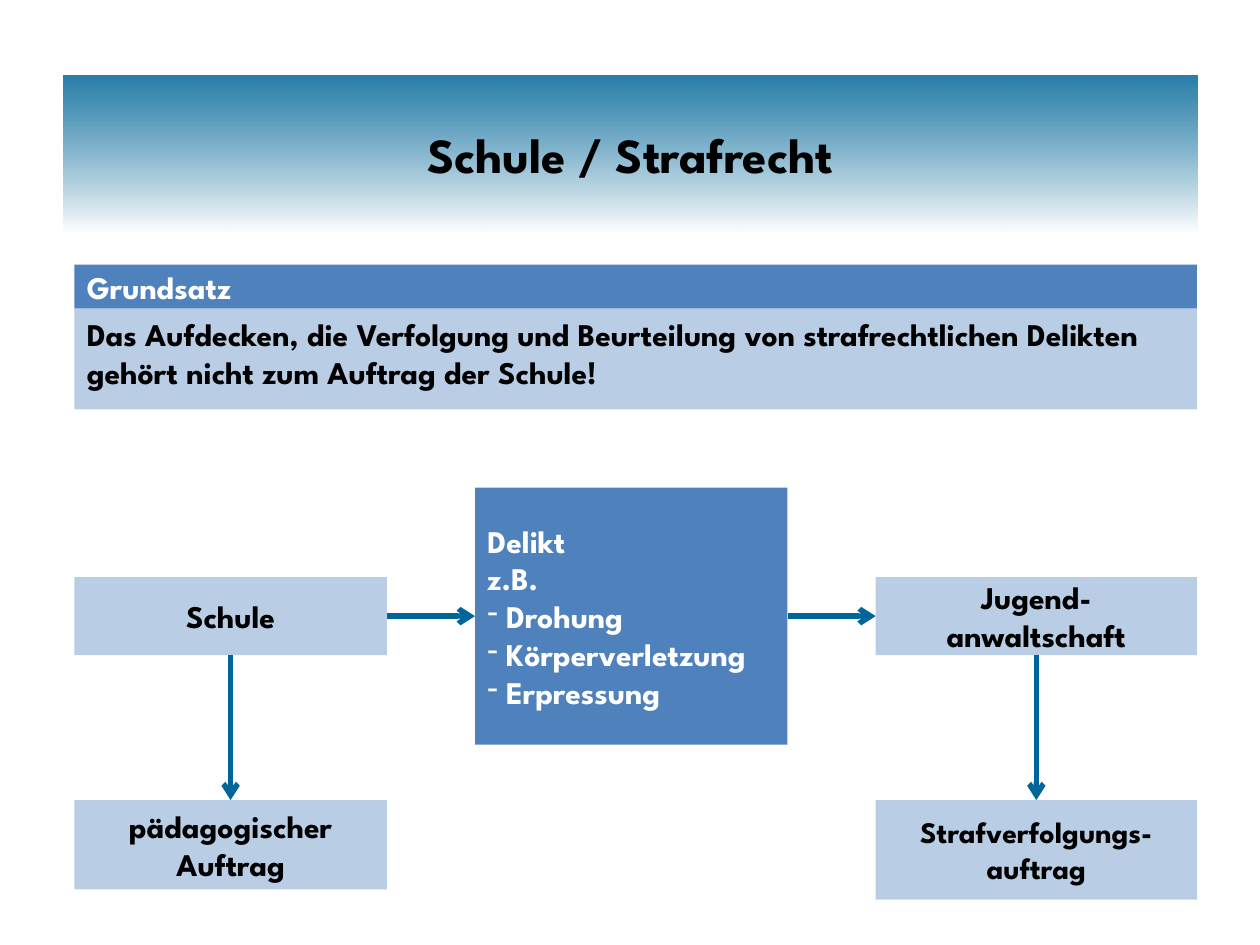
"""Build the slide on school and criminal law."""
from lxml.etree import SubElement
from pptx import Presentation
from pptx.dml.color import RGBColor
from pptx.enum.shapes import MSO_CONNECTOR, MSO_SHAPE
from pptx.enum.text import MSO_ANCHOR, PP_ALIGN
from pptx.oxml.ns import qn
from pptx.util import Inches, Pt

COLORS = {"dark": "4F81BD", "light": "B9CDE5", "accent": "006699",
          "black": "000000", "white": "FFFFFF"}
FONT = "League Spartan"
TOP, LEFT, BOTTOM, RIGHT = range(4)


class SlideBuilder:
    """Hold the style and the current slide."""

    def __init__(self, prs):
        self.slide = prs.slides.add_slide(prs.slide_layouts[5])

    def color(self, name):
        return RGBColor.from_string(COLORS[name])

    def format(self, p, size, color, align):
        p.alignment = align
        p.font.name = FONT
        p.font.size = Pt(size)
        p.font.bold = True
        p.font.color.rgb = self.color(color)

    def title(self, text, x, y, w, h):
        sp = self.slide.shapes.title
        sp.left, sp.top, sp.width, sp.height = map(Inches, (x, y, w, h))
        sp.fill.gradient()
        sp.fill.gradient_angle = 270
        start, end = sp.fill.gradient_stops
        start.position, end.position = 0, 1
        start.color.rgb = self.color("accent")
        end.color.rgb = self.color("white")
        rgb = sp._element.spPr.find(".//" + qn("a:srgbClr"))
        SubElement(rgb, qn("a:alpha"), val="84000")
        tf = sp.text_frame
        tf.text = text
        tf.vertical_anchor = MSO_ANCHOR.MIDDLE
        self.format(tf.paragraphs[0], 28, "black", PP_ALIGN.CENTER)

    def box(self, lines, x, y, w, h, fill="light", size=18, align=PP_ALIGN.CENTER,
            anchor=MSO_ANCHOR.MIDDLE, bullets=()):
        sp = self.slide.shapes.add_shape(MSO_SHAPE.RECTANGLE, *map(Inches, (x, y, w, h)))
        sp.shadow.inherit = False
        sp.fill.solid()
        sp.fill.fore_color.rgb = self.color(fill)
        sp.line.fill.background()
        tf = sp.text_frame
        tf.word_wrap = True
        tf.vertical_anchor = anchor
        color = "white" if fill == "dark" else "black"
        for i, text in enumerate([*lines, *bullets]):
            p = tf.add_paragraph() if i else tf.paragraphs[0]
            p.text = text
            if i >= len(lines):
                SubElement(p._p.get_or_add_pPr(), qn("a:buChar"), char="-")
            self.format(p, size, color, align)
        return sp

    def arrow(self, start, start_side, end, end_side):
        cxn = self.slide.shapes.add_connector(MSO_CONNECTOR.STRAIGHT, 0, 0, 0, 0)
        cxn.begin_connect(start, start_side)
        cxn.end_connect(end, end_side)
        cxn.line.color.rgb = self.color("accent")
        cxn.line.width = Pt(3)
        SubElement(cxn.line._get_or_add_ln(), qn("a:tailEnd"), type="arrow")
        SubElement(cxn._element.spPr, qn("a:effectLst"))


def main():
    prs = Presentation()
    prs.slide_width, prs.slide_height = Inches(10), Inches(7.5)
    s = SlideBuilder(prs)
    s.title("Schule / Strafrecht", 0.5, 0.6, 9, 1.25)

    left, middle, right = 0.59, 3.77, 6.95
    col_w, right_w, full_w = 2.48, 2.55, 8.91
    actor_y, actor_h, task_y = 4.58, 0.62, 6.35

    s.box(["Grundsatz"], left, 2.1, full_w, 0.35, "dark", align=PP_ALIGN.LEFT)
    s.box(["Das Aufdecken, die Verfolgung und Beurteilung von strafrechtlichen "
           "Delikten gehört nicht zum Auftrag der Schule!"],
          left, 2.45, full_w, 0.8, align=PP_ALIGN.LEFT, anchor=MSO_ANCHOR.TOP)

    school = s.box(["Schule"], left, actor_y, col_w, actor_h)
    teaching = s.box(["pädagogischer Auftrag"], left, task_y, col_w, 0.71)
    offence = s.box(["Delikt", "z.B."], middle, 3.87, col_w, 2.04, "dark",
                    align=PP_ALIGN.LEFT,
                    bullets=[" Drohung", " Körperverletzung", " Erpressung"])
    prosecutor = s.box(["Jugend-\nanwaltschaft"], right, actor_y, right_w, actor_h)
    prosecution = s.box(["Strafverfolgungs-auftrag"], right, task_y, right_w, 0.79, size=17)

    s.arrow(school, BOTTOM, teaching, TOP)
    s.arrow(prosecutor, BOTTOM, prosecution, TOP)
    s.arrow(school, RIGHT, offence, LEFT)
    s.arrow(offence, RIGHT, prosecutor, LEFT)
    prs.save("out.pptx")


if __name__ == "__main__":
    main()
